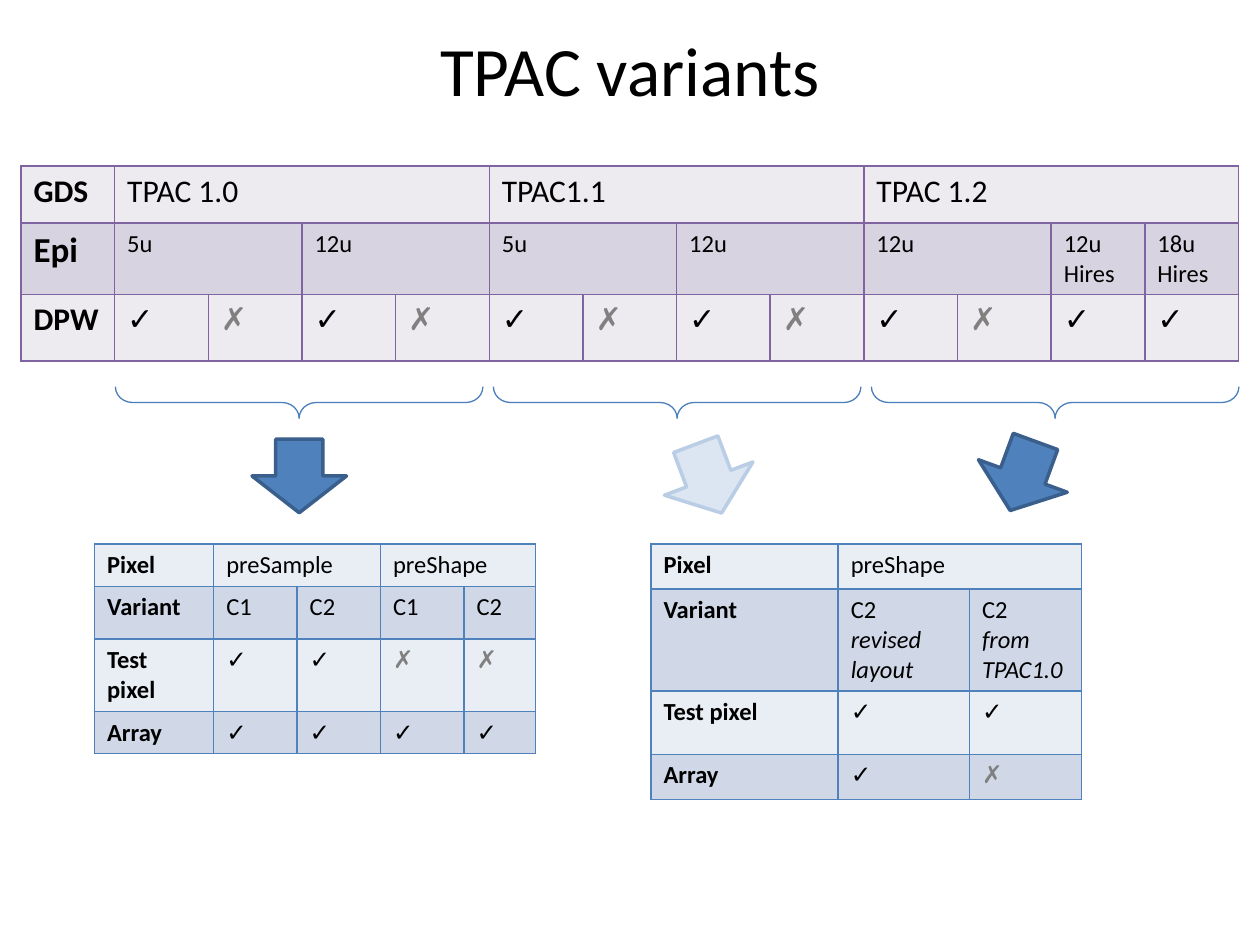
from lxml import etree
from pptx import Presentation
from pptx.dml.color import RGBColor
from pptx.enum import shapes, text
from pptx.oxml import ns
from pptx.util import Pt

HUES = {
    "ink": "000000", "cross": "808080",
    "plum": "8064A2", "plum1": "EDEAF0", "plum2": "D8D3E0",
    "blue": "4F81BD", "blue1": "E9EDF4", "blue2": "D0D8E8",
    "edge": "3A5F8C", "pale": "DCE6F2", "rim": "B9CDE5", "brace": "4B7EBC",
}
YES, NO = "✓", "✗"


def hue(name):
    return RGBColor.from_string(HUES[name])


class Deck:
    """Holds the font and the current slide."""
    face = "Calibri"

    def __init__(self, wide, high):
        self.prs = Presentation()
        self.prs.slide_width, self.prs.slide_height = Pt(wide), Pt(high)
        self.slide = self.prs.slides.add_slide(self.prs.slide_layouts[6])

    def font(self, para, size, color="ink", bold=False, italic=False):
        font = para.font
        font.name, font.size = self.face, Pt(size)
        font.bold, font.italic = bold, italic
        font.color.rgb = hue(color)

    def title(self, words, box, size):
        frame = self.slide.shapes.add_textbox(*map(Pt, box)).text_frame
        frame.word_wrap = True
        frame.vertical_anchor = text.MSO_ANCHOR.MIDDLE
        para = frame.paragraphs[0]
        para.text = words
        para.alignment = text.PP_ALIGN.CENTER
        self.font(para, size)

    def shape(self, kind, box, line, width, fill=None, turn=0):
        item = self.slide.shapes.add_shape(kind, *map(Pt, box))
        item.shadow.inherit = False
        item.rotation = turn
        item.line.color.rgb, item.line.width = hue(line), Pt(width)
        if fill:
            item.fill.solid()
            item.fill.fore_color.rgb = hue(fill)
        else:
            item.fill.background()
        return item

    def border(self, cell, color):
        props = cell._tc.get_or_add_tcPr()
        for side in ("a:lnL", "a:lnR", "a:lnT", "a:lnB"):
            line = etree.SubElement(props, ns.qn(side), w=str(Pt(1)))
            fill = etree.SubElement(line, ns.qn("a:solidFill"))
            etree.SubElement(fill, ns.qn("a:srgbClr"), val=HUES[color])

    def table(self, spot, cols, rows, cells, tone, sizes, heads):
        """A None in cells extends the cell on its left."""
        box = (*spot, sum(cols), sum(rows))
        grid = self.slide.shapes.add_table(len(rows), len(cols), *map(Pt, box)).table
        grid.first_row = grid.horz_banding = False
        for col, width in zip(grid.columns, cols):
            col.width = Pt(width)
        for r, line in enumerate(cells):
            grid.rows[r].height = Pt(rows[r])
            for c, words in enumerate(line):
                cell = grid.cell(r, c)
                self.border(cell, tone)
                cell.fill.solid()
                cell.fill.fore_color.rgb = hue(f"{tone}{r % 2 + 1}")
                if words is None:
                    continue
                cell.text = words
                for n, para in enumerate(cell.text_frame.paragraphs):
                    self.font(para, sizes[r] if c else heads[r],
                              "cross" if words == NO else "ink", c == 0, n > 0)
                end = c + 1
                while end < len(line) and line[end] is None:
                    end += 1
                if end > c + 1:
                    cell.merge(grid.cell(r, end - 1))


def main():
    deck = Deck(720, 540)
    deck.title("TPAC variants", (36, 12.24, 648, 54), 39.6)

    # Overview of the versions
    gap = [None]
    deck.table(
        (12, 95), [53.54] * 13, [32.4, 38.16, 38.16],
        [["GDS", "TPAC 1.0", *gap * 3, "TPAC1.1", *gap * 3, "TPAC 1.2", *gap * 3],
         ["Epi", *["5u", None, "12u", None] * 2, "12u", None, "12u Hires", "18u Hires"],
         ["DPW", *[YES, NO] * 5, YES, YES]],
        "plum", [18, 14, 18], [18, 20, 18])

    # Pixels of the first version
    deck.table(
        (54, 311), [68.1, 47.7, 47.7, 47.7, 40.8], [24, 30.24, 41.3, 24],
        [["Pixel", "preSample", None, "preShape", None],
         ["Variant", *["C1", "C2"] * 2],
         ["Test pixel", YES, YES, NO, NO],
         ["Array", *[YES] * 4]],
        "blue", [14] * 4, [14] * 4)

    # Pixels of the later versions
    deck.table(
        (372, 311), [107, 75, 64.2], [25.7, 58.2, 36.2, 25.7],
        [["Pixel", "preShape", None],
         ["Variant", "C2\nrevised layout", "C2\nfrom TPAC1.0"],
         ["Test pixel", YES, YES],
         ["Array", YES, NO]],
        "blue", [14] * 4, [14] * 4)

    # Arrows down to the pixel tables
    for left, top, turn, fill, line in (
            (144, 251, 0, "blue", "edge"),
            (378, 252.5, 339.4, "pale", "rim"),
            (557.5, 251, 20.1, "blue", "edge")):
        deck.shape(shapes.MSO_SHAPE.DOWN_ARROW, (left, top, 54, 42), line, 2, fill, turn)

    # Braces under the versions
    for n in range(3):
        brace = deck.shape(shapes.MSO_SHAPE.LEFT_BRACE,
                           (162 + 216 * n, 125, 18, 210), "brace", 0.75, turn=270)
        brace.adjustments[0] = 0.54

    deck.prs.save("out.pptx")


if __name__ == "__main__":
    main()
